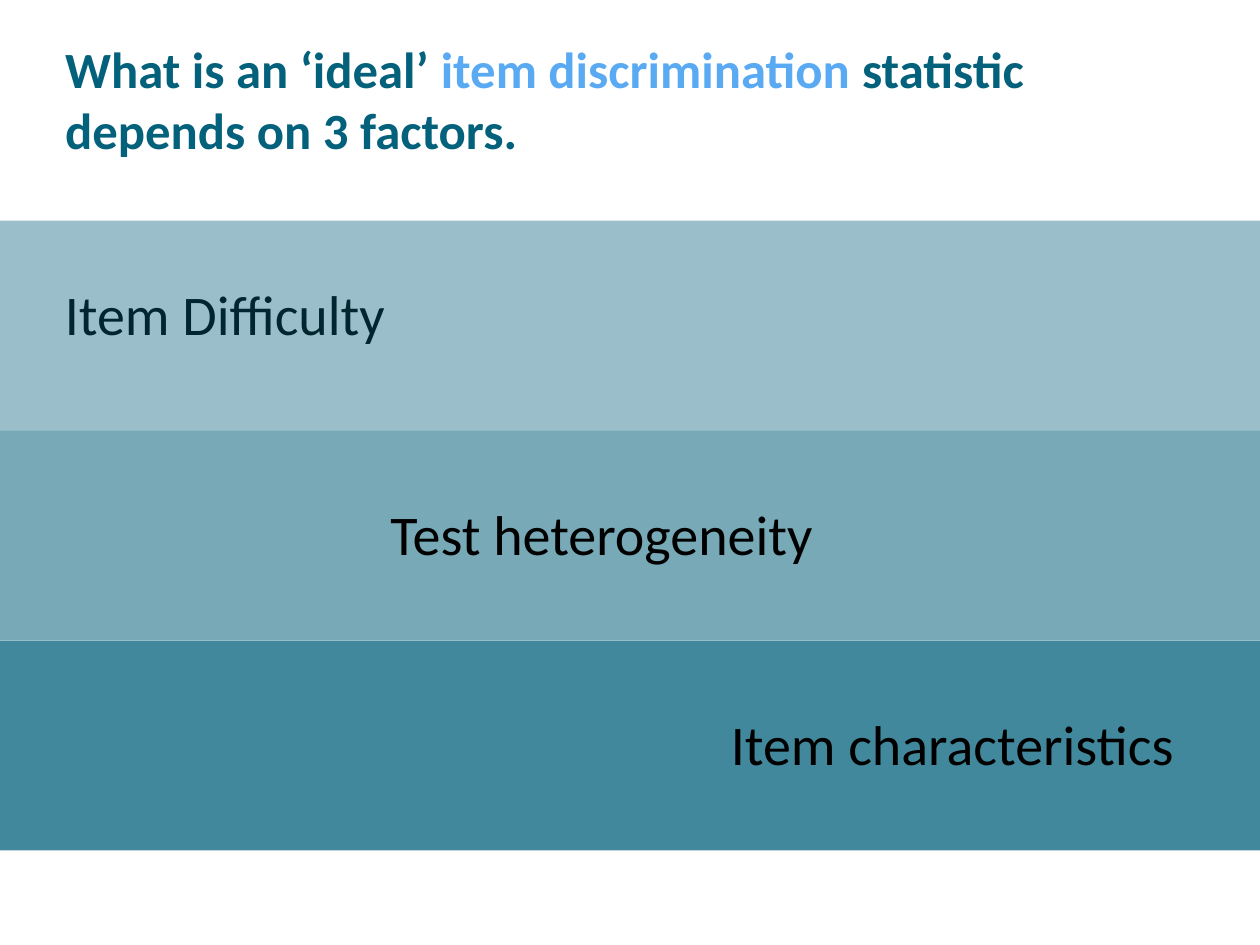
from dataclasses import dataclass

from lxml.etree import SubElement
from pptx import Presentation
from pptx.dml.color import RGBColor
from pptx.enum.shapes import MSO_SHAPE
from pptx.enum.text import MSO_ANCHOR, MSO_AUTO_SIZE, PP_ALIGN
from pptx.oxml.ns import qn
from pptx.util import Emu, Pt

SCALE = 7620  # EMU per px, 120 px to the inch
WIDTH, HEIGHT = 1200, 900
BAND_TOP, BAND_HIGH = 210, 200
LABEL_HIGH = 77


@dataclass(frozen=True)
class Theme:
    font: str = "Calibri"
    teal: str = "04617B"
    blue: str = "59AAF2"
    black: str = "000000"
    title: int = 29
    label: int = 32


@dataclass(frozen=True)
class Band:
    row: int
    alpha: int


@dataclass(frozen=True)
class Label:
    text: str
    left: int
    top: int
    width: int
    align: PP_ALIGN = PP_ALIGN.LEFT


THEME = Theme()
LOW_BANDS = [Band(1, 54), Band(2, 75)]
TOP_BAND = Band(0, 40)  # lies over its label and tints it
LABELS = [
    Label("Item Difficulty", 50, 260, 410),
    Label("Test heterogeneity", 360, 470, 500),
    Label("Item characteristics", 630, 670, 500, PP_ALIGN.RIGHT),
]
TITLE = [
    ("What is an ‘ideal’ ", THEME.teal),
    ("item discrimination ", THEME.blue),
    ("statistic depends on 3 factors.", THEME.teal),
]
FRAME = {
    "word_wrap": True,
    "auto_size": MSO_AUTO_SIZE.SHAPE_TO_FIT_TEXT,
    "vertical_anchor": MSO_ANCHOR.TOP,
}


def px(count: int) -> Emu:
    return Emu(count * SCALE)


def apply(target, values: dict) -> None:
    for name, value in values.items():
        setattr(target, name, value)


def add_run(para, text: str, size: int, color: str, bold: bool = False) -> None:
    run = para.add_run()
    run.text = text
    apply(run.font, {"name": THEME.font, "size": Pt(size), "bold": bold})
    run.font.color.rgb = RGBColor.from_string(color)


def add_band(slide, band: Band) -> None:
    top = BAND_TOP + band.row * BAND_HIGH
    shape = slide.shapes.add_shape(
        MSO_SHAPE.RECTANGLE, px(0), px(top), px(WIDTH), px(BAND_HIGH))
    shape.shadow.inherit = False
    shape.line.fill.background()
    shape.fill.solid()
    shape.fill.fore_color.rgb = RGBColor.from_string(THEME.teal)
    color = shape.fill._xPr.find(qn("a:solidFill"))[0]
    SubElement(color, qn("a:alpha"), val=str(band.alpha * 1000))


def add_label(slide, label: Label) -> None:
    box = slide.shapes.add_textbox(
        px(label.left), px(label.top), px(label.width), px(LABEL_HIGH))
    apply(box.text_frame, FRAME)
    para = box.text_frame.paragraphs[0]
    para.alignment = label.align
    add_run(para, label.text, THEME.label, THEME.black)


def set_title(slide) -> None:
    title = slide.shapes.title
    apply(title, {"left": px(50), "top": px(30),
                  "width": px(1090), "height": px(130)})
    apply(title.text_frame, FRAME)
    para = title.text_frame.paragraphs[0]
    para.alignment = PP_ALIGN.LEFT
    for text, color in TITLE:
        add_run(para, text, THEME.title, color, bold=True)


def main() -> None:
    deck = Presentation()
    apply(deck, {"slide_width": px(WIDTH), "slide_height": px(HEIGHT)})
    slide = deck.slides.add_slide(deck.slide_layouts.get_by_name("Title Only"))
    set_title(slide)
    for band in LOW_BANDS:
        add_band(slide, band)
    for label in LABELS:
        add_label(slide, label)
    add_band(slide, TOP_BAND)
    deck.save("out.pptx")


if __name__ == "__main__":
    main()
